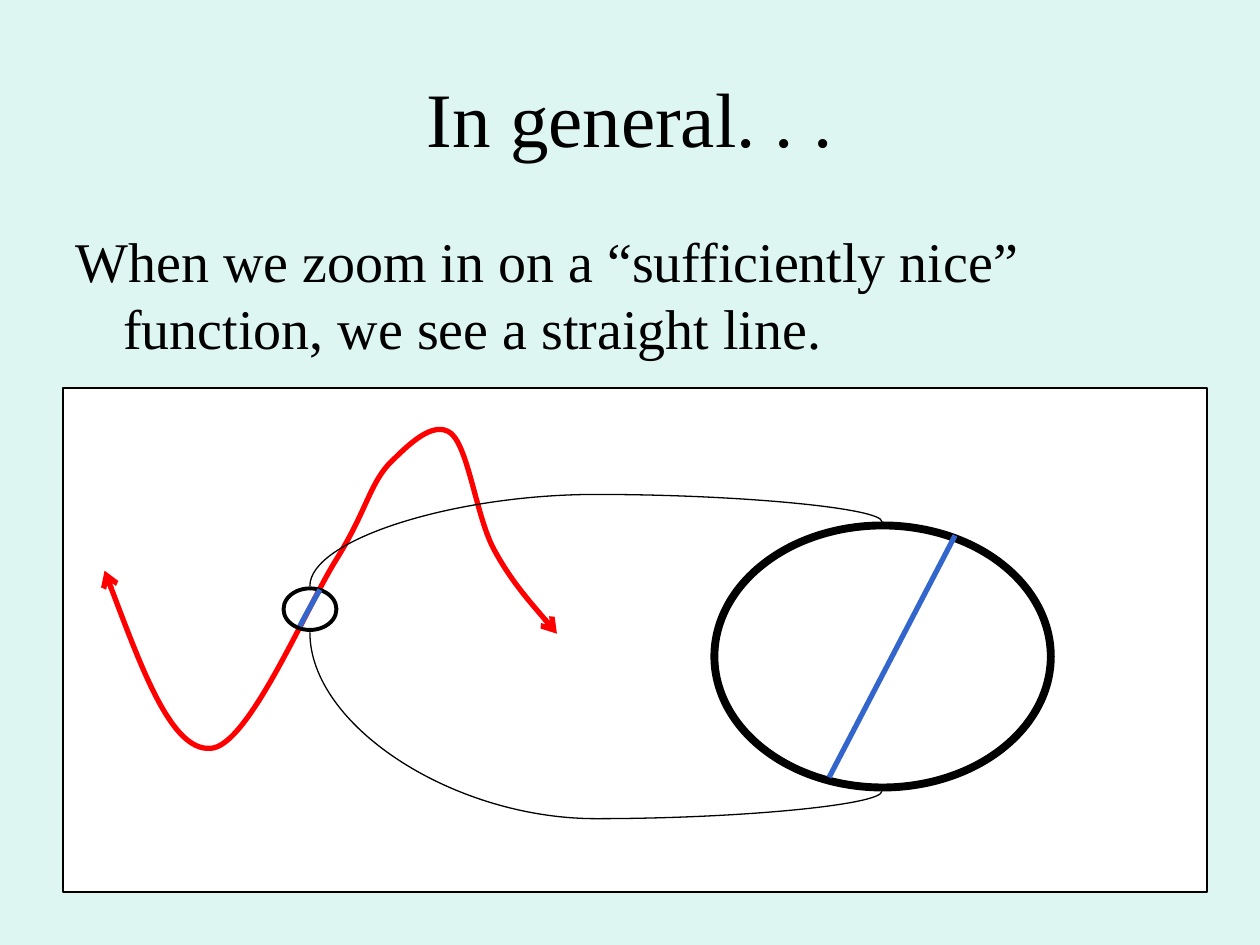
from dataclasses import dataclass

import pptx
import pptx.util
import pptx.dml.color
import pptx.enum.shapes
import pptx.enum.text
import pptx.oxml.ns
from pptx.util import Inches

COLORS = {"background": "DEF6F1", "panel": "FFFFFF", "ink": "000000",
          "curve": "FF0000", "tangent": "3366CC"}
FONT = "Times New Roman"
qn = pptx.oxml.ns.qn


@dataclass
class Outline:
    kind: pptx.enum.shapes.MSO_SHAPE
    box: tuple[float, ...]
    weight: float
    fill: str | None = None


@dataclass
class Curve:
    points: list[tuple[float, float]]
    color: str
    arrows: bool = False


@dataclass
class ZoomLink:
    begin: tuple[float, float]
    end: tuple[float, float]
    bend: int


def rgb(name: str) -> pptx.dml.color.RGBColor:
    return pptx.dml.color.RGBColor.from_string(COLORS[name])


def set_line(shape, color: str, weight: float) -> None:
    shape.line.color.rgb = rgb(color)
    shape.line.width = pptx.util.Pt(weight)


def clear_effects(connector) -> None:
    spPr = connector._element.spPr
    spPr.append(spPr.makeelement(qn("a:effectLst"), {}))


def add_text(s, box: tuple[float, ...], text: str, size: float):
    tf = s.shapes.add_textbox(*map(Inches, box)).text_frame
    tf.word_wrap = True
    p = tf.paragraphs[0]
    p.text = text
    p.font.name = FONT
    p.font.size = pptx.util.Pt(size)
    p.font.color.rgb = rgb("ink")
    return tf, p


def add_outline(s, outline: Outline) -> None:
    sp = s.shapes.add_shape(outline.kind, *map(Inches, outline.box))
    sp.shadow.inherit = False
    if outline.fill:
        sp.fill.solid()
        sp.fill.fore_color.rgb = rgb(outline.fill)
    else:
        sp.fill.background()
    set_line(sp, "ink", outline.weight)


def add_curve(s, curve: Curve) -> None:
    start, *rest = [(Inches(x), Inches(y)) for x, y in curve.points]
    builder = s.shapes.build_freeform(*start)
    builder.add_line_segments(rest, close=False)
    sp = builder.convert_to_shape()
    sp.shadow.inherit = False
    sp.fill.background()
    set_line(sp, curve.color, 3)
    segments = list(sp._element.iter(qn("a:lnTo")))
    for i in range(0, len(segments), 3):
        bezier = segments[i].makeelement(qn("a:cubicBezTo"), {})
        segments[i].addprevious(bezier)
        for segment in segments[i:i + 3]:
            bezier.append(segment[0])
            segment.getparent().remove(segment)
    if curve.arrows:
        ln = sp.line._get_or_add_ln()
        for tag in ("a:headEnd", "a:tailEnd"):
            ln.append(ln.makeelement(qn(tag), {"type": "arrow"}))


def add_zoom_link(shapes, link: ZoomLink) -> None:
    (x1, y1), (x2, y2) = link.begin, link.end
    cx, cy = (x1 + x2) / 2, (y1 + y2) / 2
    dx, dy = (y1 - y2) / 2, (x2 - x1) / 2
    c = shapes.add_connector(pptx.enum.shapes.MSO_CONNECTOR.CURVE,
                             *map(Inches, (cx - dx, cy - dy, cx + dx, cy + dy)))
    set_line(c, "ink", 0.75)
    clear_effects(c)
    spPr = c._element.spPr
    spPr.find(qn("a:xfrm")).set("rot", str(270 * 60000))
    guides = spPr.find(qn("a:prstGeom")).get_or_add_avLst()
    guides.append(guides.makeelement(
        qn("a:gd"), {"name": "adj1", "fmla": f"val {link.bend}"}))


def main() -> None:
    prs = pptx.Presentation()
    prs.slide_width, prs.slide_height = Inches(10), Inches(7.5)
    s = prs.slides.add_slide(prs.slide_layouts[6])
    s.background.fill.solid()
    s.background.fill.fore_color.rgb = rgb("background")

    shape = pptx.enum.shapes.MSO_SHAPE
    add_outline(s, Outline(shape.RECTANGLE, (0.5, 3.08, 9.08, 4), 0.75, "panel"))

    tf, p = add_text(s, (0.5, 0.3, 9, 1.25), "In general. . .", 44)
    tf.vertical_anchor = pptx.enum.text.MSO_ANCHOR.MIDDLE
    p.alignment = pptx.enum.text.PP_ALIGN.CENTER

    tf, p = add_text(s, (0.5, 1.75, 9, 1.75),
                     "When we zoom in on a “sufficiently nice” function, "
                     "we see a straight line.", 32)
    p.space_before = pptx.util.Pt(6.4)
    pPr = p._p.get_or_add_pPr()
    pPr.set("marL", str(Inches(0.38)))
    pPr.set("indent", str(-Inches(0.38)))

    add_curve(s, Curve([
        (0.83, 4.53), (1.1, 5.24), (1.36, 5.96), (1.67, 5.94),
        (1.97, 5.93), (2.43, 4.82), (2.67, 4.44),
        (2.9, 4.07), (2.93, 3.86), (3.08, 3.69),
        (3.24, 3.53), (3.44, 3.33), (3.58, 3.44),
        (3.72, 3.56), (3.78, 4.1), (3.92, 4.36),
        (4.06, 4.62), (4.33, 4.92), (4.42, 5.03)], "curve", arrows=True))

    for outline in (Outline(shape.OVAL, (2.25, 4.67, 0.42, 0.33), 2.25),
                    Outline(shape.OVAL, (5.67, 4.17, 2.67, 2.08), 4.5)):
        add_outline(s, outline)

    tangent = s.shapes.add_connector(pptx.enum.shapes.MSO_CONNECTOR.STRAIGHT,
                                     *map(Inches, (6.58, 6.17, 7.58, 4.25)))
    set_line(tangent, "tangent", 3)
    clear_effects(tangent)

    links = s.shapes.add_group_shape().shapes
    for link in (ZoomLink((2.46, 4.65), (7, 4.14), 142400),
                 ZoomLink((2.46, 5.02), (7, 6.28), 117300)):
        add_zoom_link(links, link)

    add_curve(s, Curve([(2.54, 4.68), (2.51, 4.73), (2.41, 4.91), (2.38, 4.97)],
                       "tangent"))
    prs.save("out.pptx")


if __name__ == "__main__":
    main()
